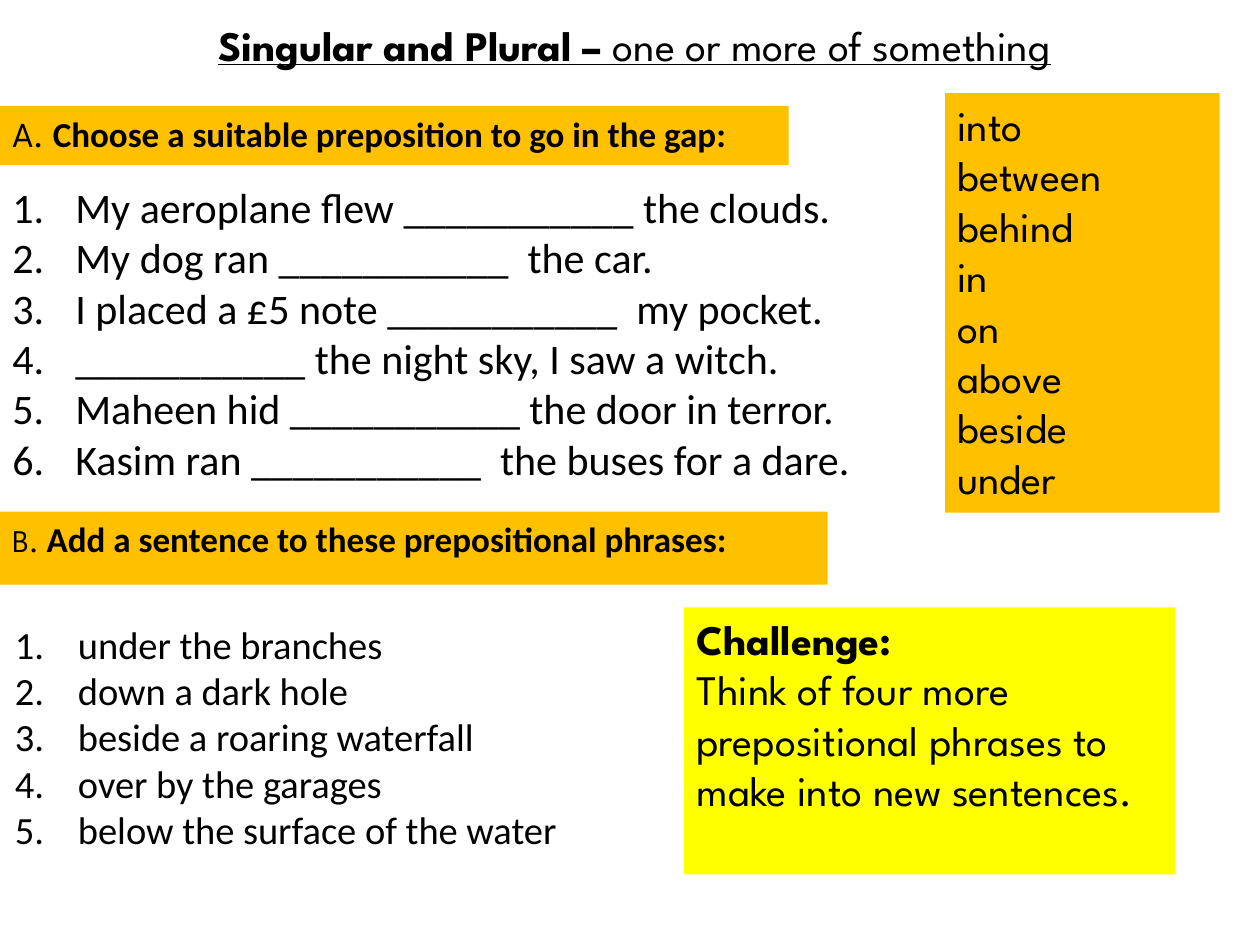
from pptx import Presentation
from pptx.dml.color import RGBColor
from pptx.enum.shapes import MSO_SHAPE
from pptx.enum.text import MSO_ANCHOR, PP_ALIGN
from pptx.oxml.ns import qn
from pptx.util import Inches, Pt
from lxml import etree

RECT = MSO_SHAPE.RECTANGLE
TOP, MIDDLE = MSO_ANCHOR.TOP, MSO_ANCHOR.MIDDLE
LEFT, CENTER = PP_ALIGN.LEFT, PP_ALIGN.CENTER

COLORS = {"text": "000000", "amber": "FFC000", "yellow": "FFFF00"}
SANS, ROUND = "Calibri", "League Spartan"
WIDTH, HEIGHT = Inches(10), Inches(7.5)
COLS, ROWS = 100, 75

GAP = "_" * 11
GAPS = [
    f"My aeroplane flew {GAP} the clouds.",
    f"My dog ran {GAP}  the car.",
    f"I placed a £5 note {GAP}  my pocket.",
    f"{GAP} the night sky, I saw a witch.",
    f"Maheen hid {GAP} the door in terror.",
    f"Kasim ran {GAP}  the buses for a dare.",
]
WORDS = ["into", "between", "behind", "in", "on", "above", "beside", "under"]
PHRASES = [
    "under the branches",
    "down a dark hole",
    "beside a roaring waterfall",
    "over by the garages",
    "below the surface of the water",
]
TASK = "Think of four more prepositional phrases to make into new sentences."


def color(name):
    return RGBColor.from_string(COLORS[name])


def place(col, row, cols, rows):
    return (
        round(WIDTH * col / COLS),
        round(HEIGHT * row / ROWS),
        round(WIDTH * cols / COLS),
        round(HEIGHT * rows / ROWS),
    )


def add_box(slide, cell, fill=None, anchor=TOP):
    if fill:
        box = slide.shapes.add_shape(RECT, *place(*cell))
        box.shadow.inherit = False
        box.fill.solid()
        box.fill.fore_color.rgb = color(fill)
        box.line.fill.background()
    else:
        box = slide.shapes.add_textbox(*place(*cell))
    frame = box.text_frame
    frame.word_wrap = True
    frame.vertical_anchor = anchor
    return frame


def style(run, size, face, bold=False, under=False):
    font = run.font
    font.size = Pt(size)
    font.name = face
    font.bold = bold
    font.underline = under
    font.color.rgb = color("text")


def add_lines(frame, lines, size, face):
    frame.text = "\n".join(lines)
    for para in frame.paragraphs:
        para.alignment = LEFT
        for run in para.runs:
            style(run, size, face)


def add_list(slide, cell, lines, size):
    frame = add_box(slide, cell)
    add_lines(frame, lines, size, SANS)
    for para in frame.paragraphs:
        props = para._p.get_or_add_pPr()
        props.set("marL", str(Inches(0.5)))
        props.set("indent", str(-Inches(0.5)))
        mark = etree.SubElement(props, qn("a:buAutoNum"))
        mark.set("type", "arabicPeriod")


def add_title(slide, cell, lead, rest):
    para = add_box(slide, cell, anchor=MIDDLE).paragraphs[0]
    para.alignment = CENTER
    for text, bold in ((lead, True), (rest, False)):
        run = para.add_run()
        run.text = text
        style(run, 24, ROUND, bold, True)


def add_head(slide, cell, mark, size, text):
    para = add_box(slide, cell, "amber").paragraphs[0]
    para.alignment = LEFT
    para.space_before = Pt(4)
    first, second = para.add_run(), para.add_run()
    first.text, second.text = mark, text
    style(first, size, ROUND)
    style(second, 20, SANS, True)


def add_panel(slide, cell, fill, lines):
    frame = add_box(slide, cell, fill)
    add_lines(frame, lines, 24, ROUND)
    return frame


def main():
    deck = Presentation()
    deck.slide_width, deck.slide_height = WIDTH, HEIGHT
    slide = deck.slides.add_slide(deck.slide_layouts[6])
    add_list(slide, (0, 13.9, 77, 25.2), GAPS, 24)
    add_title(slide, (3.9, 0, 92.9, 7.1),
              "Singular and Plural – ", "one or more of something")
    add_head(slide, (0, 8.4, 62.6, 4.7), "A. ", 20,
             "Choose a suitable preposition to go in the gap:")
    add_panel(slide, (75, 7.4, 21.8, 33.3), "amber", WORDS)
    add_head(slide, (0, 40.6, 65.7, 5.8), "B. ", 18,
             "Add a sentence to these prepositional phrases:")
    add_list(slide, (0.2, 48.8, 50.5, 19.5), PHRASES, 22)
    frame = add_panel(slide, (54.3, 48.2, 39, 21.2), "yellow",
                      ["Challenge:", TASK])
    frame.paragraphs[0].runs[0].font.bold = True
    deck.save("out.pptx")


if __name__ == "__main__":
    main()
